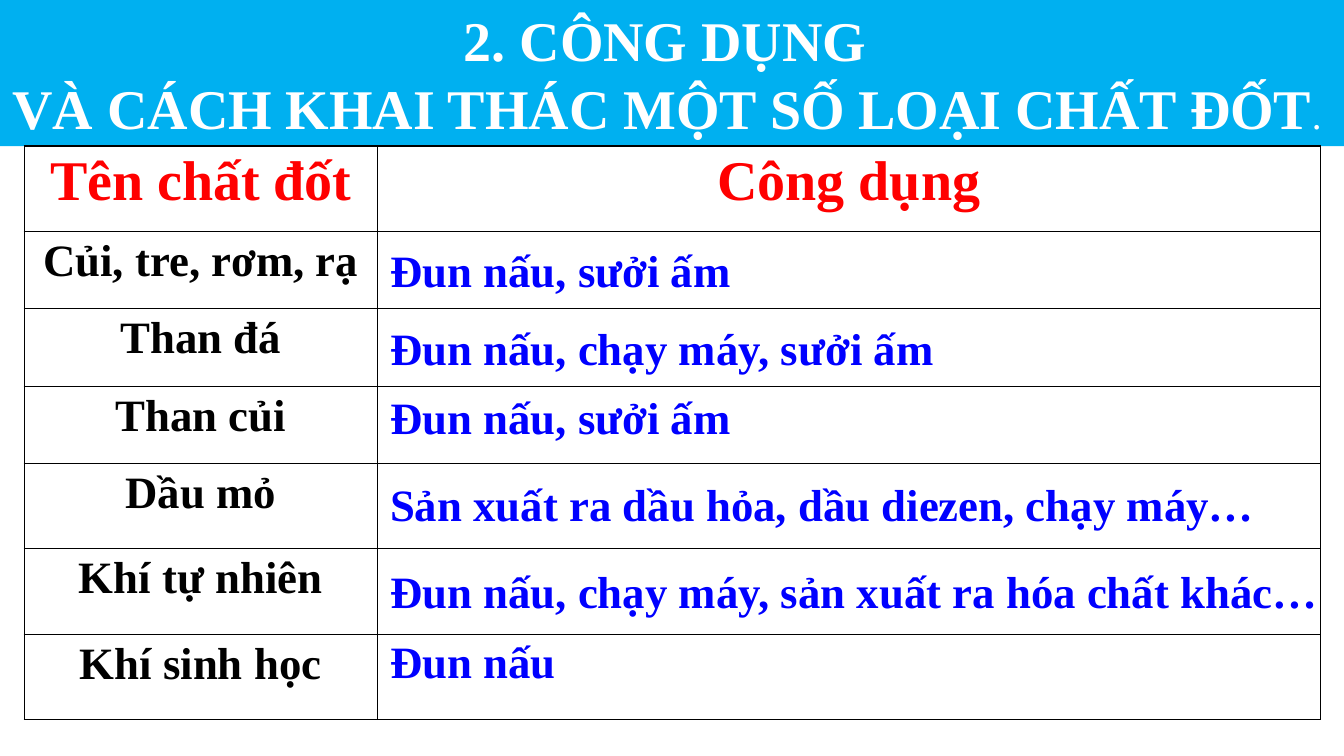
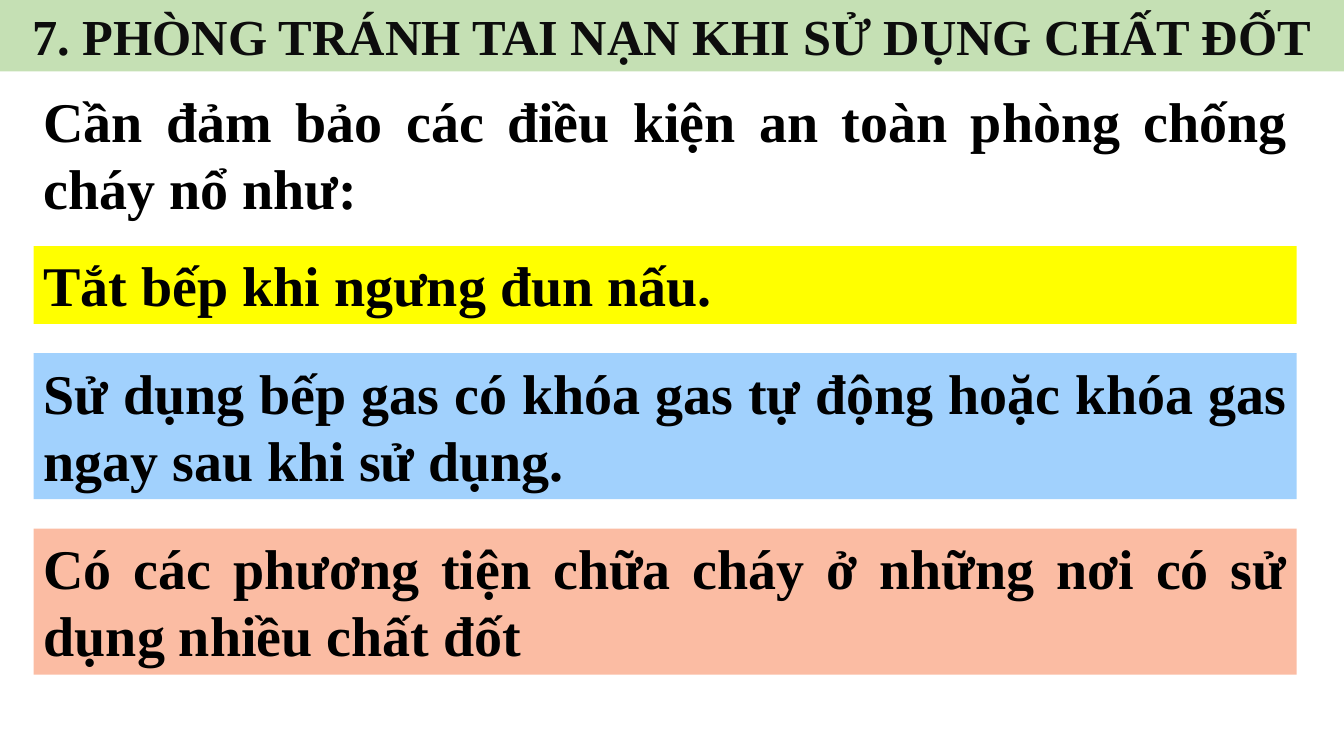
from dataclasses import dataclass

import pptx
import pptx.dml.color
import pptx.enum.shapes
import pptx.enum.text
import pptx.oxml
import pptx.oxml.ns
import pptx.util

Cm = pptx.util.Cm
Pt = pptx.util.Pt
ALIGN = pptx.enum.text.PP_ALIGN
ANCHOR = pptx.enum.text.MSO_ANCHOR


@dataclass(frozen=True)
class Theme:
    font: str = "Times New Roman"
    large: int = 40
    title_small: int = 36
    body: int = 32
    period: int = 28
    white: str = "FFFFFF"
    black: str = "000000"
    near_black: str = "0D0D0D"
    red: str = "FF0000"
    blue: str = "0000FF"
    sky_band: str = "00B0F0"
    green_band: str = "C5E0B4"
    yellow: str = "FFFF00"
    light_blue: str = "A1D1FD"
    salmon: str = "FBBCA3"


THEME = Theme()
SLIDE_WIDTH = Cm(33.87)
SLIDE_HEIGHT = Cm(19.05)
NO_TABLE_STYLE = "{2D5ABB26-0587-4C30-8999-92F81FD0307C}"

# Fuel, its use, and the top and width of the use label (cm)
FUELS = [
    ("Củi, tre, rơm, rạ", "Đun nấu, sưởi ấm", 6, 12.4),
    ("Than đá", "Đun nấu, chạy máy, sưởi ấm", 7.95, 18.36),
    ("Than củi", "Đun nấu, sưởi ấm", 9.7, 12.4),
    ("Dầu mỏ", "Sản xuất ra dầu hỏa, dầu diezen, chạy máy…", 11.9, 23.67),
    ("Khí tự nhiên", "Đun nấu, chạy máy, sản xuất ra hóa chất khác…", 14.07, 24.26),
    ("Khí sinh học", "Đun nấu", 15.85, 8.26),
]
COLUMN_WIDTHS = [8.9, 23.76]
ROW_HEIGHTS = [2.15] + [1.95] * 3 + [2.15] * 3

# Safety measure, fill, height (cm), alignment
MEASURES = [
    ("Tắt bếp khi ngưng đun nấu.", THEME.yellow, 1.96, ALIGN.LEFT),
    ("Sử dụng bếp gas có khóa gas tự động hoặc khóa gas ngay sau khi sử dụng.",
     THEME.light_blue, 3.68, ALIGN.JUSTIFY),
    ("Có các phương tiện chữa cháy ở những nơi có sử dụng nhiều chất đốt",
     THEME.salmon, 3.68, ALIGN.JUSTIFY),
]


def rgb(color):
    return pptx.dml.color.RGBColor.from_string(color)


def fill_solid(target, color):
    target.fill.solid()
    target.fill.fore_color.rgb = rgb(color)


def format_paragraph(paragraph, size, color, alignment):
    paragraph.alignment = alignment
    font = paragraph.font
    font.name = THEME.font
    font.size = Pt(size)
    font.bold = True
    font.color.rgb = rgb(color)


def add_title_band(presentation, lines, height, size, fill, color):
    """Add a title-only slide whose title is a full-width coloured band."""
    slide = presentation.slides.add_slide(presentation.slide_layouts[5])
    title = slide.shapes.title
    title.left, title.top = 0, 0
    title.width, title.height = SLIDE_WIDTH, Cm(height)
    fill_solid(title, fill)
    frame = title.text_frame
    frame.auto_size = pptx.enum.text.MSO_AUTO_SIZE.NONE
    frame.word_wrap = True
    frame.vertical_anchor = ANCHOR.MIDDLE
    frame.text = "\n".join(lines)
    for paragraph in frame.paragraphs:
        format_paragraph(paragraph, size, color, ALIGN.CENTER)
    return slide


def write_text(shape, text, size, color, alignment):
    frame = shape.text_frame
    frame.word_wrap = True
    frame.vertical_anchor = ANCHOR.TOP
    frame.text = text
    format_paragraph(frame.paragraphs[0], size, color, alignment)


def add_text_block(slide, text, top, height, alignment, fill=None):
    """Add a wide block of text, on a coloured rectangle if a fill is given."""
    bounds = Cm(0.85), Cm(top), Cm(31.83), Cm(height)
    if fill:
        shape = slide.shapes.add_shape(pptx.enum.shapes.MSO_SHAPE.RECTANGLE, *bounds)
        shape.shadow.inherit = False
        shape.line.fill.background()
        fill_solid(shape, fill)
    else:
        shape = slide.shapes.add_textbox(*bounds)
    write_text(shape, text, THEME.large, THEME.black, alignment)


def add_use_label(slide, text, top, width):
    label = slide.shapes.add_textbox(Cm(9.58), Cm(top), Cm(width), Cm(1.62))
    write_text(label, text, THEME.body, THEME.blue, ALIGN.LEFT)


def format_cell(cell):
    """Give a cell a white fill and thin black borders."""
    fill_solid(cell, THEME.white)
    properties = cell._tc.get_or_add_tcPr()
    for index, side in enumerate(("lnL", "lnR", "lnT", "lnB")):
        border = pptx.oxml.parse_xml(
            f'<a:{side} {pptx.oxml.ns.nsdecls("a")} w="12700"><a:solidFill>'
            f'<a:srgbClr val="{THEME.black}"/></a:solidFill></a:{side}>')
        properties.insert(index, border)


def write_cell(cell, text, size, color):
    cell.text = text
    format_paragraph(cell.text_frame.paragraphs[0], size, color, ALIGN.CENTER)


def add_fuel_table(slide):
    graphic_frame = slide.shapes.add_table(
        len(ROW_HEIGHTS), len(COLUMN_WIDTHS), Cm(0.61), Cm(3.68),
        Cm(sum(COLUMN_WIDTHS)), Cm(sum(ROW_HEIGHTS)))
    table = graphic_frame.table
    table.first_row = table.horz_banding = False
    style = table._tbl.tblPr.find(pptx.oxml.ns.qn("a:tableStyleId"))
    style.text = NO_TABLE_STYLE
    for column, width in zip(table.columns, COLUMN_WIDTHS):
        column.width = Cm(width)
    for row, height in zip(table.rows, ROW_HEIGHTS):
        row.height = Cm(height)
    for cell in table.iter_cells():
        format_cell(cell)

    for column, heading in enumerate(("Tên chất đốt", "Công dụng")):
        write_cell(table.cell(0, column), heading, THEME.large, THEME.red)
    for row, (fuel, *_) in enumerate(FUELS, start=1):
        write_cell(table.cell(row, 0), fuel, THEME.body, THEME.black)


def build_uses_slide(presentation):
    slide = add_title_band(
        presentation,
        ["2. CÔNG DỤNG ", "VÀ CÁCH KHAI THÁC MỘT SỐ LOẠI CHẤT ĐỐT"],
        3.68, THEME.large, THEME.sky_band, THEME.white)
    period = slide.shapes.title.text_frame.paragraphs[-1].add_run()
    period.text = ". "
    period.font.size = Pt(THEME.period)
    period.font.bold = False
    add_fuel_table(slide)
    # The uses lie over the second column
    for _, use, top, width in FUELS:
        add_use_label(slide, use, top, width)


def build_safety_slide(presentation):
    slide = add_title_band(
        presentation, ["7. PHÒNG TRÁNH TAI NẠN KHI SỬ DỤNG CHẤT ĐỐT"],
        1.8, THEME.title_small, THEME.green_band, THEME.near_black)
    add_text_block(
        slide, "Cần đảm bảo các điều kiện an toàn phòng chống cháy nổ như: ",
        2.06, 3.68, ALIGN.JUSTIFY)
    # Measures are stacked with equal gaps
    top, gap = 6.2, 0.74
    for text, fill, height, alignment in MEASURES:
        add_text_block(slide, text, top, height, alignment, fill)
        top += height + gap


def main():
    presentation = pptx.Presentation()
    presentation.slide_width = SLIDE_WIDTH
    presentation.slide_height = SLIDE_HEIGHT
    build_uses_slide(presentation)
    build_safety_slide(presentation)
    presentation.save("out.pptx")


if __name__ == "__main__":
    main()
